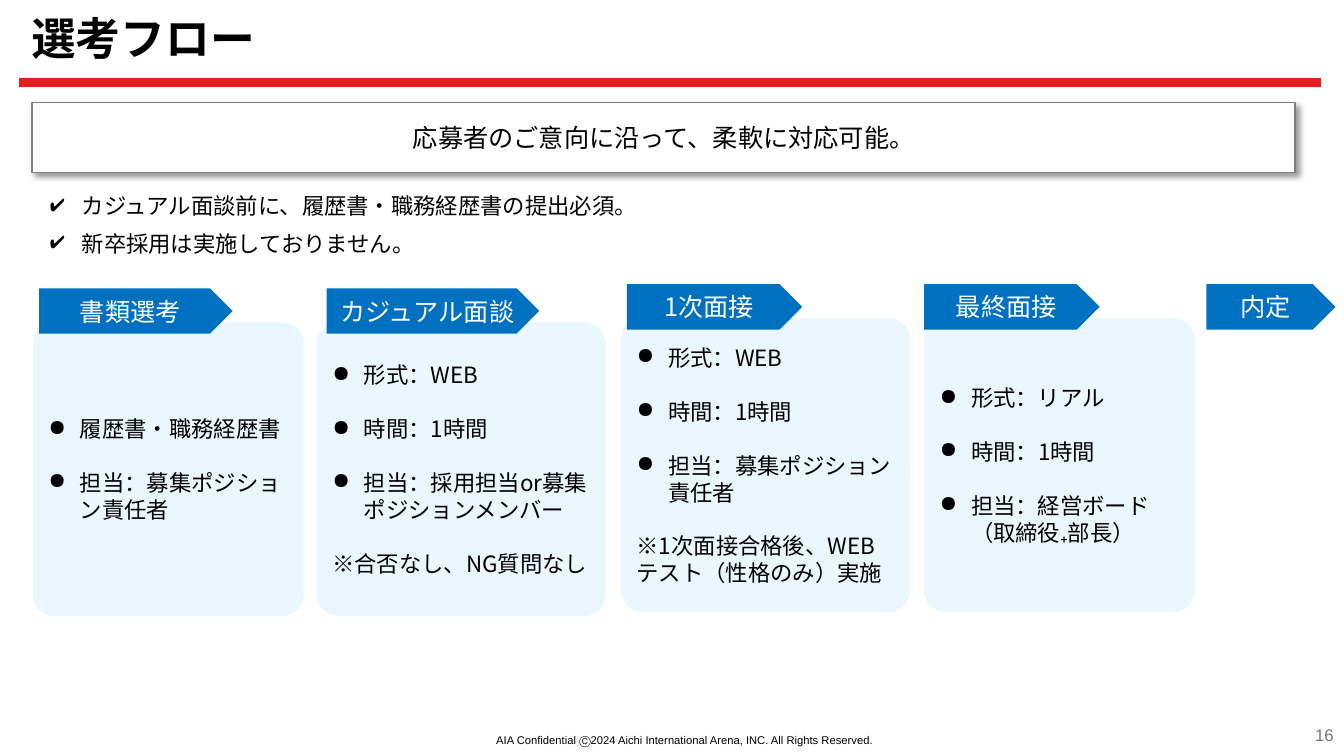
import pptx
import pptx.dml.color
import pptx.enum.shapes
import pptx.enum.text
import pptx.oxml
import pptx.oxml.ns
import pptx.util
from lxml import etree

Pt = pptx.util.Pt
SHAPE = pptx.enum.shapes.MSO_SHAPE
ALIGN = pptx.enum.text.PP_ALIGN
ANCHOR = pptx.enum.text.MSO_ANCHOR
GROW = pptx.enum.text.MSO_AUTO_SIZE.SHAPE_TO_FIT_TEXT

JAPANESE, LATIN = "Noto Sans CJK JP", "Arial"
BLACK, WHITE, RED, BLUE = "000000", "FFFFFF", "E61E1E", "0070C0"
PALE_BLUE, GREY, PAGE_GREY = "EBF7FF", "7F7F7F", "757575"

BULLET_INDENT = 22.5
ITEM_GAP = 19.3
ARROW_HEIGHT = 32.4
ARROW_OVERLAP = 8.64
CARD_HEIGHT = 211

NOTES = ["カジュアル面談前に、履歴書・職務経歴書の提出必須。", "新卒採用は実施しておりません。"]

# name, step left and top, arrow offset and width, card width, bulleted items, closing remark
STEPS = [
    ("書類選考", 23, 205.9, 5, 138.2, 194.4,
     ["履歴書・職務経歴書", "担当：募集ポジション責任者"], None),
    ("カジュアル面談", 225.4, 205.9, 7.9, 151.9, 208.1,
     ["形式：WEB", "時間：1時間", "担当：採用担当or募集ポジションメンバー"],
     "※合否なし、NG質問なし"),
    ("1次面接", 442.8, 203, 5, 125.3, 208.1,
     ["形式：WEB", "時間：1時間", "担当：募集ポジション責任者"],
     "※1次面接合格後、WEBテスト（性格のみ）実施"),
    ("最終面接", 659.5, 203, 0.7, 125.3, 194.4,
     ["形式：リアル", "時間：1時間", "担当：経営ボード（取締役₊部長）"], None),
    ("内定", 861.8, 203, 0, 92.2, 0, [], None),
]


def colour(value):
    return pptx.dml.color.RGBColor.from_string(value)


def set_all(target, values):
    for name, value in values.items():
        setattr(target, name, value)


def add_child(parent, tag, **attributes):
    child = etree.SubElement(parent, pptx.oxml.ns.qn(tag))
    for name, value in attributes.items():
        child.set(name, value)
    return child


def add_bullet(para, character):
    properties = para._p.get_or_add_pPr()
    properties.set("marL", str(Pt(BULLET_INDENT)))
    properties.set("indent", str(-Pt(BULLET_INDENT)))
    add_child(add_child(properties, "a:buClr"), "a:srgbClr", val=BLACK)
    add_child(properties, "a:buChar", char=character)


def write(shape, lines, size, ink=BLACK, font=JAPANESE, bold=False, gap=0,
          para_format=None, **frame_format):
    """Fill a shape with (text, bullet character or None) lines."""
    frame = shape.text_frame
    set_all(frame, {
        "word_wrap": True, "vertical_anchor": ANCHOR.MIDDLE,
        "margin_left": Pt(7.2), "margin_right": Pt(7.2),
        "margin_top": Pt(3.6), "margin_bottom": Pt(3.6), **frame_format})
    for index, (text, bullet) in enumerate(lines):
        para = frame.add_paragraph() if index else frame.paragraphs[0]
        if bullet:
            add_bullet(para, bullet)
        if index and gap:
            para.space_before = Pt(gap)
        set_all(para, {"alignment": ALIGN.LEFT, **(para_format or {})})
        span = para.add_run()
        span.text = text
        set_all(span.font, {"name": font, "size": Pt(size), "bold": bold})
        span.font.color.rgb = colour(ink)
        add_child(span.font._element, "a:ea", typeface=font)


def add_text(page, box, lines, size, **options):
    write(page.shapes.add_textbox(*map(Pt, box)), lines, size, **options)


def add_panel(page, kind, box, fill, outline=None):
    panel = page.shapes.add_shape(kind, *map(Pt, box))
    panel.shadow.inherit = False
    panel.fill.solid()
    panel.fill.fore_color.rgb = colour(fill)
    if outline:
        panel.line.color.rgb = colour(outline)
        panel.line.width = Pt(1)
    else:
        panel.line.fill.background()
    return panel


def add_header(page, left, top, width):
    add_text(page, (left + 1.4, top, width, 27.4), [("選考フロー", None)], 32,
             bold=True, para_format={"line_spacing": 0.9})
    rule = page.shapes.add_connector(
        pptx.enum.shapes.MSO_CONNECTOR.STRAIGHT,
        Pt(left), Pt(top + 43.2), Pt(left + width), Pt(top + 43.2))
    rule.line.color.rgb = colour(RED)
    rule.line.width = Pt(6)
    add_child(rule._element.spPr, "a:effectLst")


def add_message(page, box):
    panel = add_panel(page, SHAPE.RECTANGLE, box, WHITE, GREY)
    effects = panel._element.spPr.find(pptx.oxml.ns.qn("a:effectLst"))
    shadow = add_child(effects, "a:outerShdw", blurRad=str(Pt(4)), dist=str(Pt(3)),
                       dir="2700000", algn="tl", rotWithShape="0")
    add_child(add_child(shadow, "a:srgbClr", val=BLACK), "a:alpha", val="40000")
    write(panel, [("応募者のご意向に沿って、柔軟に対応可能。", None)], 18,
          para_format={"alignment": ALIGN.CENTER})


def add_notes(page, left, top, width, height):
    for index, note in enumerate(NOTES):
        add_text(page, (left, top + index * height, width, height), [(note, "✔")], 16,
                 vertical_anchor=ANCHOR.TOP, auto_size=GROW)


def add_step(page, name, left, top, arrow_offset, arrow_width, card_width, items, remark):
    if items:
        card_top = top + ARROW_HEIGHT - ARROW_OVERLAP
        card = add_panel(page, SHAPE.ROUNDED_RECTANGLE,
                         (left, card_top, card_width, CARD_HEIGHT), PALE_BLUE, WHITE)
        card.adjustments[0] = 0.08
        lines = [(item, "●") for item in items]
        if remark:
            lines.append((remark, None))
        write(card, lines, 16, gap=ITEM_GAP)
    arrow = add_panel(page, SHAPE.PENTAGON,
                      (left + arrow_offset, top, arrow_width, ARROW_HEIGHT), BLUE)
    write(arrow, [(name, None)], 18, ink=WHITE, para_format={"alignment": ALIGN.CENTER})


def add_footer(page, left, top, width):
    add_text(page, (left, top + 6.5, 385.9, 23),
             [("AIA Confidential Ⓒ2024 Aichi International Arena, INC. All Rights Reserved.", None)],
             8, font=LATIN, para_format={"alignment": ALIGN.CENTER},
             margin_left=Pt(18), margin_right=0, margin_top=0, margin_bottom=0)
    add_text(page, (left + width - 216, top, 216, 28.8), [("16", None)], 12,
             ink=PAGE_GREY, font=LATIN, para_format={"alignment": ALIGN.RIGHT})


def main():
    deck = pptx.Presentation()
    set_all(deck, {"slide_width": Pt(960), "slide_height": Pt(540)})
    page = deck.slides.add_slide(deck.slide_layouts[6])
    add_header(page, 13.7, 15.8, 929.8)
    add_message(page, (23, 73.4, 902.2, 49.7))
    add_notes(page, 28.8, 133.9, 902.2, 26.6)
    for step in STEPS:
        add_step(page, *step)
    add_footer(page, 287.3, 510.5, 672.5)
    deck.save("out.pptx")


if __name__ == "__main__":
    main()
